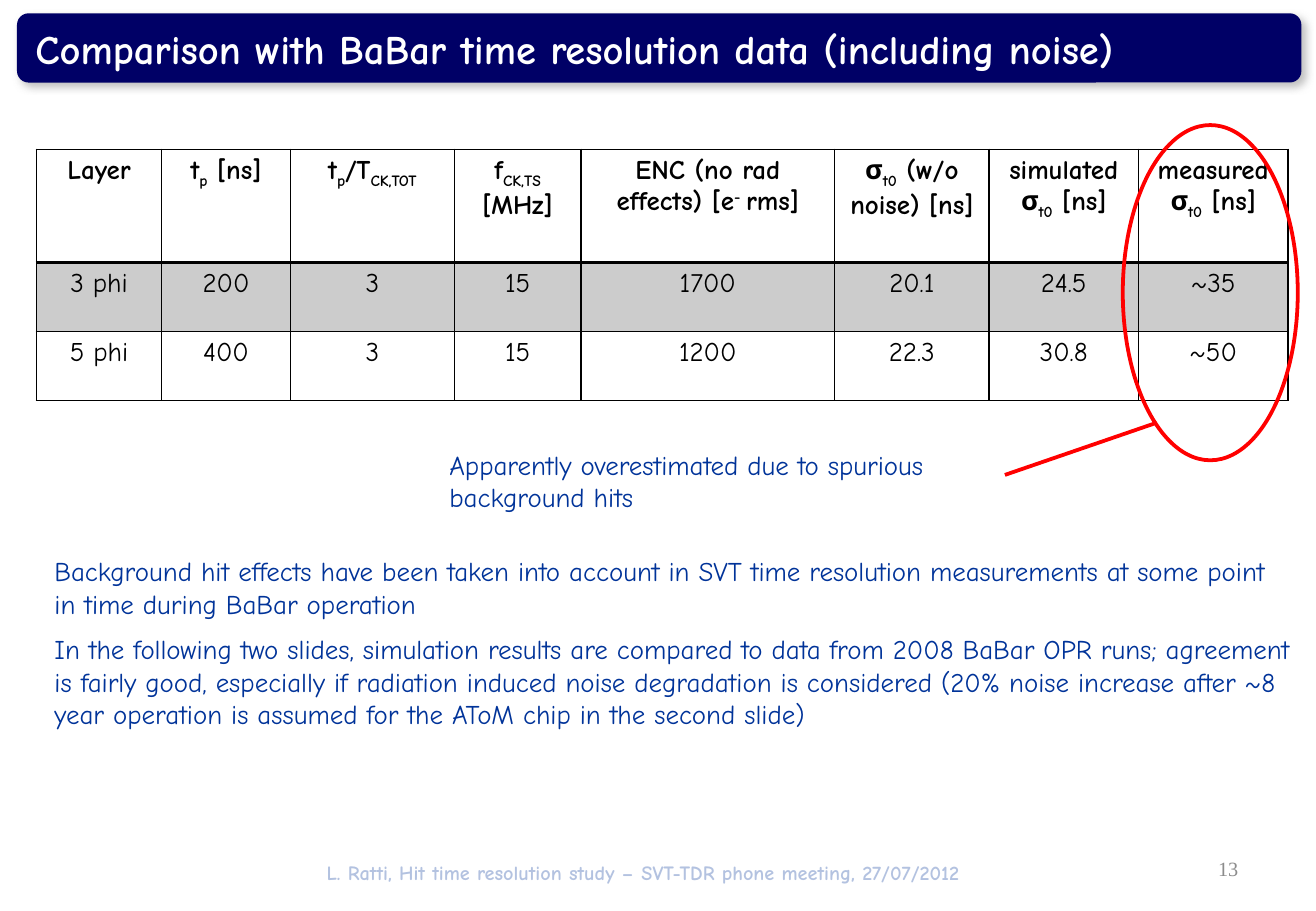
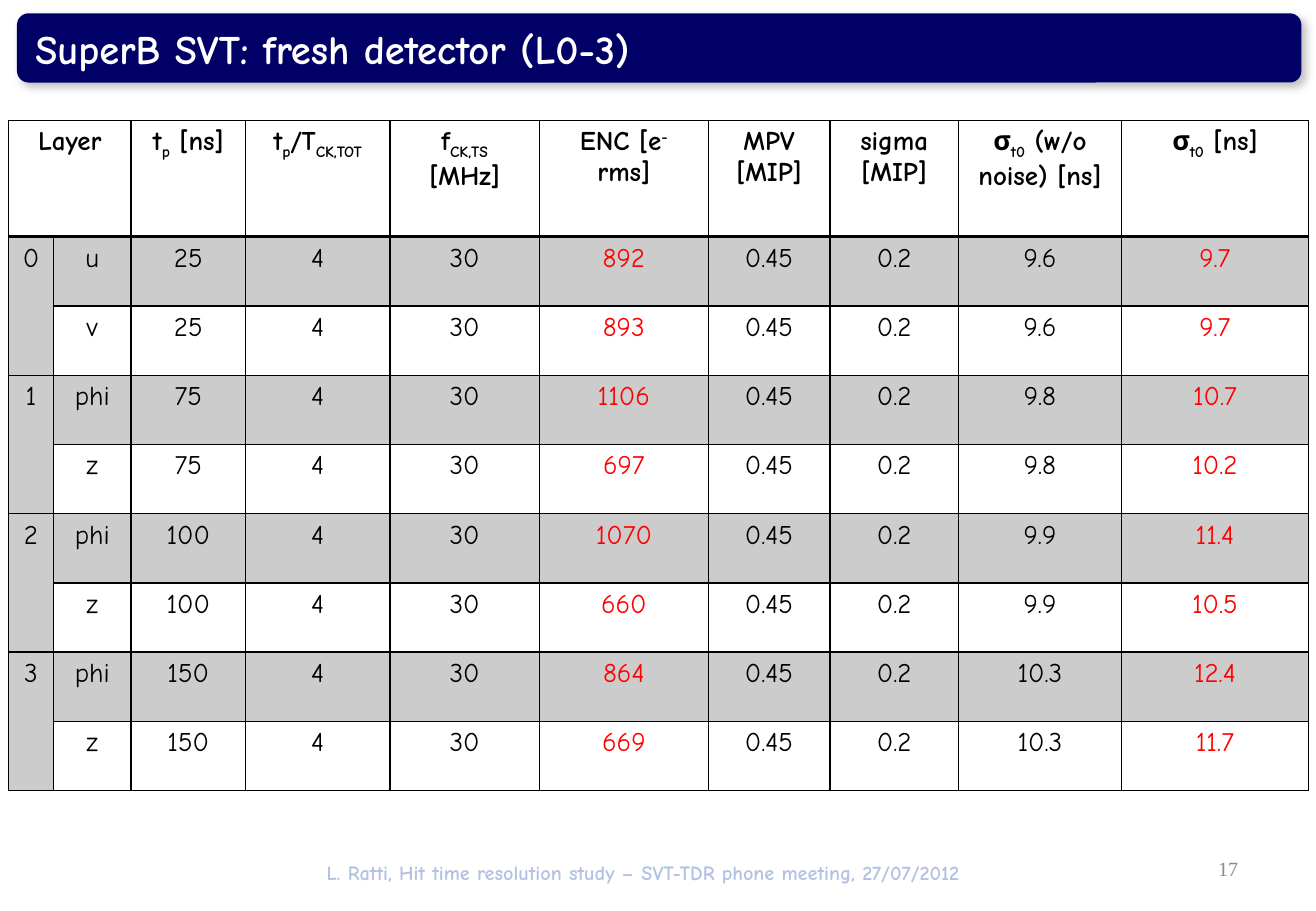
import dataclasses

import pptx
import pptx.dml.color
import pptx.enum.shapes
import pptx.enum.text
import pptx.oxml.ns
import pptx.util
from lxml import etree

Inches, Pt = pptx.util.Inches, pptx.util.Pt
ALIGN, ANCHOR = pptx.enum.text.PP_ALIGN, pptx.enum.text.MSO_ANCHOR
SHAPE = pptx.enum.shapes.MSO_SHAPE
qn = pptx.oxml.ns.qn


@dataclasses.dataclass(frozen=True)
class Theme:
    font: str = "Comic Neue"
    number_font: str = "Times New Roman"
    white: str = "FFFFFF"
    black: str = "000000"
    navy: str = "000066"
    blue: str = "003399"
    red: str = "FF0000"
    band: str = "CCCCCC"
    shadow: str = "808080"
    number: str = "8C8C8C"
    title_size: int = 24
    text_size: int = 16
    small_size: int = 12
    mark_width: float = 2.25


THEME = Theme()
FOOTER = "L. Ratti, Hit time resolution study – SVT-TDR phone meeting, 27/07/2012"
TITLE_AREA = (0.19, 0.15, 10.15, 0.5)

# In table headers "|" separates runs, "_" starts a subscript and "^" a superscript.
PEAKING, RATIO, CLOCK = "t|_p| [ns]", "t|_p|/T|_CK,TOT", "f|_CK,TS| [MHz]"
NOISELESS = "σ|_t0| (w/o noise) [ns]"

COMPARISON = {
    "number": "13",
    "title": "Comparison with BaBar time resolution data (including noise)",
    "corner": (0.3, 1.23),
    "columns": (1.03, 1.06, 1.35, 1.04, 2.09, 1.27, 1.23, 1.23),
    "header_height": 0.93,
    "header": ("Layer", PEAKING, RATIO, CLOCK, "ENC (no rad effects) [e|^- |rms]",
               NOISELESS, "simulated σ|_t0| [ns]", "measured σ|_t0| [ns]"),
    "rows": (
        ("3 phi", "200", "3", "15", "1700", "20.1", "24.5", "~35"),
        ("5 phi", "400", "3", "15", "1200", "22.3", "30.8", "~50"),
    ),
    "red_columns": (),
}
DETECTOR = {
    "number": "17",
    "title": "SuperB SVT: fresh detector (L0-3)",
    "corner": (0.07, 0.99),
    "columns": (0.37, 0.64, 0.94, 1.19, 1.23, 1.39, 1, 1.06, 1.34, 1.54),
    "header_height": 0.96,
    "header": ("Layer", "", PEAKING, RATIO, CLOCK, "ENC [e|^- |rms]",
               "MPV [MIP]", "sigma [MIP]", NOISELESS, "σ|_t0| [ns]"),
    "rows": (
        ("0", "u", "25", "4", "30", "892", "0.45", "0.2", "9.6", "9.7"),
        ("", "v", "25", "4", "30", "893", "0.45", "0.2", "9.6", "9.7"),
        ("1", "phi", "75", "4", "30", "1106", "0.45", "0.2", "9.8", "10.7"),
        ("", "z", "75", "4", "30", "697", "0.45", "0.2", "9.8", "10.2"),
        ("2", "phi", "100", "4", "30", "1070", "0.45", "0.2", "9.9", "11.4"),
        ("", "z", "100", "4", "30", "660", "0.45", "0.2", "9.9", "10.5"),
        ("3", "phi", "150", "4", "30", "864", "0.45", "0.2", "10.3", "12.4"),
        ("", "z", "150", "4", "30", "669", "0.45", "0.2", "10.3", "11.7"),
    ),
    "red_columns": (5, 9),
}
ROW_HEIGHT = 0.57
NOTES = (
    ((3.6, 3.64, 4.96, 0.64), "Apparently overestimated due to spurious background hits"),
    ((0.35, 4.52, 10.3, 0.64),
     "Background hit effects have been taken into account in SVT time resolution "
     "measurements at some point in time during BaBar operation"),
    ((0.35, 5.16, 10.48, 0.91),
     "In the following two slides, simulation results are compared to data from 2008 "
     "BaBar OPR runs; agreement is fairly good, especially if radiation induced noise "
     "degradation is considered (20% noise increase after ~8 year operation is assumed "
     "for the AToM chip in the second slide)"),
)


def inches(values):
    return [Inches(value) for value in values]


def rgb(color):
    return pptx.dml.color.RGBColor.from_string(color)


def child(parent, tag, **attributes):
    return etree.SubElement(parent, qn(tag), attributes)


def style(paragraph, size, color, bold=False, font=THEME.font, align=ALIGN.LEFT):
    paragraph.alignment = align
    for span in paragraph.runs:
        span.font.name, span.font.size, span.font.bold = font, Pt(size), bold
        span.font.color.rgb = rgb(color)


def add_text(page, area, text, size, color, **look):
    box = page.shapes.add_textbox(*inches(area))
    box.text_frame.word_wrap = True
    box.text_frame.text = text
    style(box.text_frame.paragraphs[0], size, color, **look)
    return box


def add_panel(page, kind, area, color, opacity=100):
    panel = page.shapes.add_shape(kind, *inches(area))
    panel.shadow.inherit = False
    panel.line.fill.background()
    panel.fill.solid()
    panel.fill.fore_color.rgb = rgb(color)
    if opacity < 100:
        tint = panel.element.spPr.find(".//" + qn("a:srgbClr"))
        child(tint, "a:alpha", val=str(opacity * 1000))
    return panel


def add_band_shadow(band):
    effects = band.element.spPr.find(qn("a:effectLst"))
    shadow = child(effects, "a:outerShdw", blurRad=str(Pt(5)), dist=str(Pt(3)),
                   dir=str(45 * 60000), algn="tl", rotWithShape="0")
    child(child(shadow, "a:srgbClr", val=THEME.shadow), "a:alpha", val="50000")


def furnish_layout(layout, page):
    """Draw the shared parts on a page, then hand them to its layout."""
    footer = add_text(page, (1.91, 7.03, 6.77, 0.3), FOOTER, THEME.small_size,
                      THEME.blue, bold=True, align=ALIGN.CENTER)
    patch = add_panel(page, SHAPE.RECTANGLE, (9.72, 6.97, 0.89, 0.38), THEME.white, 40)
    band = add_panel(page, SHAPE.ROUNDED_RECTANGLE, (0.14, 0.11, 10.57, 0.57), THEME.navy)
    add_band_shadow(band)
    veil = add_panel(page, SHAPE.RECTANGLE, (0.08, 6.44, 10.67, 1), THEME.white, 70)
    for identifier, part in enumerate((footer, patch, band, veil), start=100):
        part.element.find(".//" + qn("p:cNvPr")).set("id", str(identifier))
        layout.shapes.element.append(part.element)
    title = layout.placeholders[0]
    title.left, title.top, title.width, title.height = inches(TITLE_AREA)


def add_heading(page, content):
    frame = page.shapes.title.text_frame
    frame.text = content["title"]
    frame.auto_size = pptx.enum.text.MSO_AUTO_SIZE.NONE
    frame.vertical_anchor = ANCHOR.MIDDLE
    style(frame.paragraphs[0], THEME.title_size, THEME.white, bold=True)
    number = add_text(page, (7.76, 6.95, 2.53, 0.4), content["number"], THEME.small_size,
                      THEME.number, font=THEME.number_font, align=ALIGN.RIGHT)
    number.text_frame.vertical_anchor = ANCHOR.MIDDLE


def add_borders(cell, row):
    properties = cell._tc.get_or_add_tcPr()
    widths = {"L": 1, "R": 1, "T": 2 if row == 1 else 1, "B": 2 if row == 0 else 1}
    for side, width in widths.items():
        line = child(properties, "a:ln" + side, w=str(Pt(width)))
        child(child(line, "a:solidFill"), "a:srgbClr", val=THEME.black)


def write_cell(cell, markup, color, bold):
    paragraph = cell.text_frame.paragraphs[0]
    for piece in markup.split("|") if markup else ():
        span = paragraph.add_run()
        span.text = piece.lstrip("_^")
        baseline = {"_": "-25000", "^": "30000"}.get(piece[0])
        if baseline:
            span.font._element.set("baseline", baseline)
    style(paragraph, THEME.text_size, color, bold=bold, align=ALIGN.CENTER)


def add_data_table(page, content):
    lines = (content["header"], *content["rows"])
    widths = content["columns"]
    heights = [content["header_height"]] + [ROW_HEIGHT] * len(content["rows"])
    area = (*content["corner"], sum(widths), sum(heights))
    table = page.shapes.add_table(len(lines), len(widths), *inches(area)).table
    table.first_row = table.horz_banding = False
    for column, width in zip(table.columns, inches(widths)):
        column.width = width
    for row, height in zip(table.rows, inches(heights)):
        row.height = height
    for row, line in enumerate(lines):
        for column, markup in enumerate(line):
            cell = table.cell(row, column)
            red = row > 0 and column in content["red_columns"]
            write_cell(cell, markup, THEME.red if red else THEME.black, bold=row == 0)
            add_borders(cell, row)
            if row % 2:
                cell.fill.solid()
                cell.fill.fore_color.rgb = rgb(THEME.band)
            else:
                cell.fill.background()
    return table


def merge_layers(table):
    table.cell(0, 0).merge(table.cell(0, 1))
    for row in range(1, len(table.rows), 2):
        table.cell(row, 0).merge(table.cell(row + 1, 0))


def mark_measured(page):
    ring = page.shapes.add_shape(SHAPE.OVAL, *inches((9.24, 1.03, 1.44, 2.76)))
    ring.shadow.inherit = False
    ring.fill.background()
    pointer = page.shapes.add_connector(
        pptx.enum.shapes.MSO_CONNECTOR.STRAIGHT, *inches((9.52, 3.48, 8.27, 3.91)))
    for mark in (ring, pointer):
        mark.line.color.rgb = rgb(THEME.red)
        mark.line.width = Pt(THEME.mark_width)
    child(pointer.element.spPr, "a:effectLst")


def main():
    deck = pptx.Presentation()
    deck.slide_width, deck.slide_height = inches((10.83, 7.5))
    layout = deck.slide_layouts.get_by_name("Title Only")

    comparison = deck.slides.add_slide(layout)
    furnish_layout(layout, comparison)
    add_heading(comparison, COMPARISON)
    add_data_table(comparison, COMPARISON)
    mark_measured(comparison)
    for area, text in NOTES:
        add_text(comparison, area, text, THEME.text_size, THEME.blue)

    detector = deck.slides.add_slide(layout)
    add_heading(detector, DETECTOR)
    merge_layers(add_data_table(detector, DETECTOR))

    deck.save("out.pptx")


if __name__ == "__main__":
    main()
